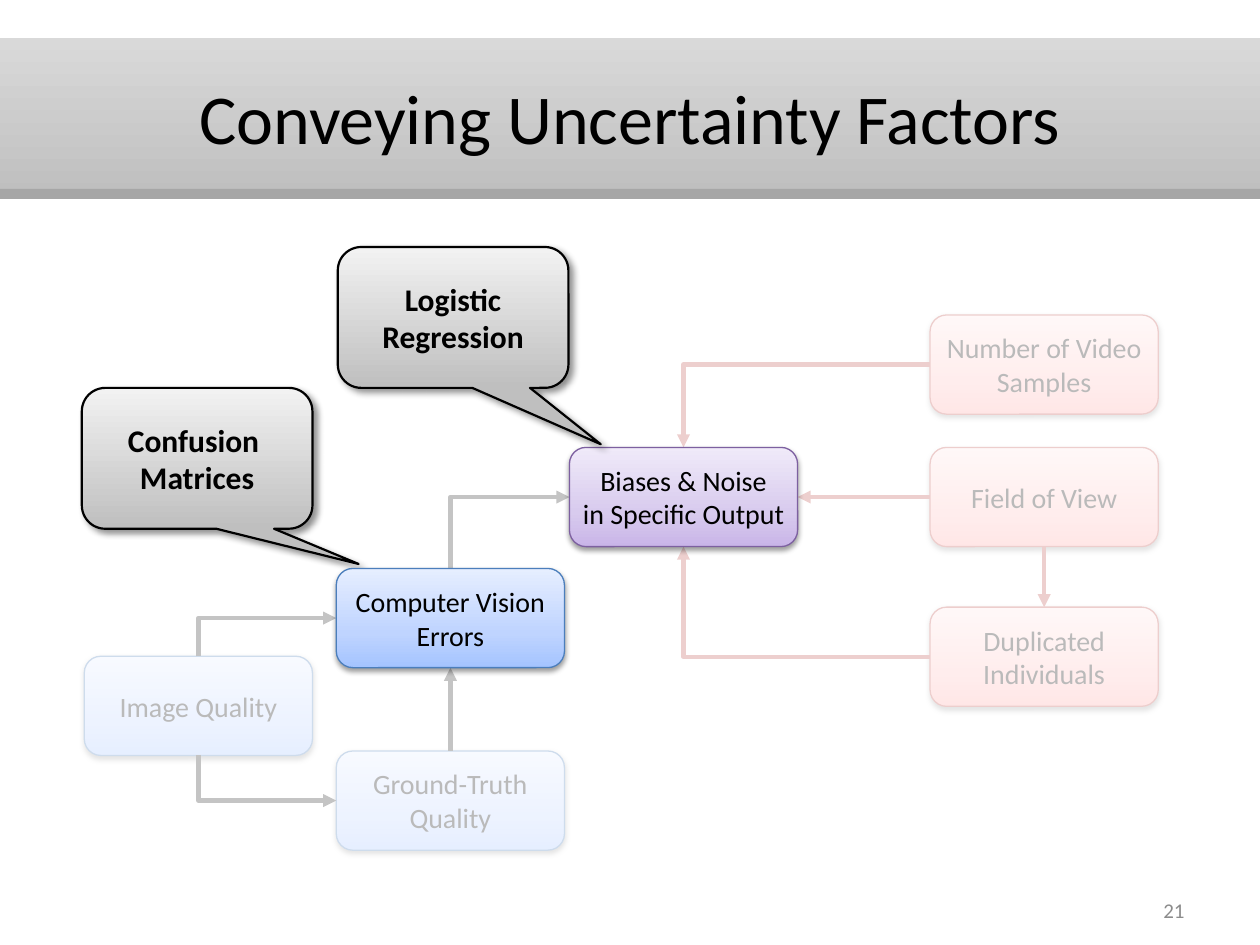
"""Build a slide on conveying uncertainty factors as a flow of linked boxes."""
from lxml import etree
from pptx import Presentation
from pptx.dml.color import RGBColor
from pptx.enum.shapes import MSO_CONNECTOR, MSO_SHAPE
from pptx.enum.text import MSO_ANCHOR, PP_ALIGN
from pptx.oxml.ns import qn
from pptx.util import Cm, Pt

RECT, ROUNDED = MSO_SHAPE.RECTANGLE, MSO_SHAPE.ROUNDED_RECTANGLE
CALLOUT = MSO_SHAPE.ROUNDED_RECTANGULAR_CALLOUT
STRAIGHT, ELBOW = MSO_CONNECTOR.STRAIGHT, MSO_CONNECTOR.ELBOW
MIDDLE = MSO_ANCHOR.MIDDLE
CENTER, RIGHT = PP_ALIGN.CENTER, PP_ALIGN.RIGHT

BLACK = RGBColor(0x00, 0x00, 0x00)
WHITE = RGBColor(0xFF, 0xFF, 0xFF)
NUMBER_GRAY = RGBColor(0x8C, 0x8C, 0x8C)
RULE_GRAY = RGBColor(0xA6, 0xA6, 0xA6)
SILVER = RGBColor(0xBF, 0xBF, 0xBF)
LIGHT_GRAY = RGBColor(0xD9, 0xD9, 0xD9)
PALE_GRAY = RGBColor(0xF2, 0xF2, 0xF2)
DARK_LINK = RGBColor(0x26, 0x26, 0x26)
RED_LINK = RGBColor(0xC0, 0x50, 0x4D)
RED_EDGE = RGBColor(0xBF, 0x4C, 0x48)
BLUE_EDGE = RGBColor(0x4B, 0x7E, 0xBC)
PURPLE_EDGE = RGBColor(0x7D, 0x60, 0xA0)
RED_STOPS = (RGBColor(0xFF, 0xA6, 0xA5), RGBColor(0xFF, 0xC0, 0xBF), RGBColor(0xFF, 0xE7, 0xE7))
BLUE_STOPS = (RGBColor(0xA4, 0xC4, 0xFF), RGBColor(0xBF, 0xD4, 0xFF), RGBColor(0xE6, 0xEE, 0xFF))
PURPLE_STOPS = (RGBColor(0xC9, 0xB5, 0xE8), RGBColor(0xD8, 0xCB, 0xEE), RGBColor(0xF0, 0xEA, 0xF9))
RED, BLUE, PURPLE = (RED_STOPS, RED_EDGE), (BLUE_STOPS, BLUE_EDGE), (PURPLE_STOPS, PURPLE_EDGE)

SLIDE_W, SLIDE_H = 25.4, 19.05
NODE_W, NODE_H = 4.6, 2.0
CALLOUT_W, CALLOUT_H = 4.65, 2.84
TOP, BOTTOM, LEFT, RIGHT_SIDE = (0.5, 0), (0.5, 1), (0, 0.5), (1, 0.5)


def port(place, side):
    return place[0] + side[0] * NODE_W, place[1] + side[1] * NODE_H


def add_color(parent, color, alpha=None):
    element = etree.SubElement(parent, qn("a:srgbClr"), val=str(color))
    if alpha is not None:
        etree.SubElement(element, qn("a:alpha"), val=str(alpha * 1000))


class FactorSlide:
    """Holds the style and the current slide."""

    def __init__(self, slide, font="Calibri"):
        self.shapes = slide.shapes
        self.font = font

    def shape(self, kind, x, y, w, h, edge=None, width=0.75):
        shape = self.shapes.add_shape(kind, Cm(x), Cm(y), Cm(w), Cm(h))
        shape.shadow.inherit = False
        if edge is None:
            shape.line.fill.background()
        else:
            shape.line.color.rgb = edge
            shape.line.width = Pt(width)
        return shape

    def bar(self, x, y, w, h, color, alpha=None):
        bar = self.shape(RECT, x, y, w, h)
        bar.fill.solid()
        bar.fill.fore_color.rgb = color
        if alpha is not None:
            fill = bar._element.spPr.find(qn("a:solidFill"))
            fill.clear()
            add_color(fill, color, alpha)

    def shade(self, shape, stops):
        shape.fill.gradient()
        shape.fill.gradient_angle = 90
        stop_list = shape._element.spPr.find(qn("a:gradFill")).find(qn("a:gsLst"))
        stop_list.clear()
        positions = (0, 35, 100) if len(stops) == 3 else (0, 100)
        for position, color in zip(positions, stops):
            add_color(etree.SubElement(stop_list, qn("a:gs"), pos=str(position * 1000)), color)

    def cast_shadow(self, shape, alpha, blur, distance, angle):
        effects = shape._element.spPr.find(qn("a:effectLst"))
        shadow = etree.SubElement(
            effects, qn("a:outerShdw"), blurRad=str(Pt(blur)), dist=str(Pt(distance)),
            dir=str(angle * 60000), rotWithShape="0")
        add_color(shadow, BLACK, alpha)

    def set_text(self, shape, text, size, color=BLACK, align=CENTER, bold=False, wrap=True, hanging=0):
        frame = shape.text_frame
        frame.text = text
        frame.word_wrap = wrap
        frame.vertical_anchor = MIDDLE
        for paragraph in frame.paragraphs:
            paragraph.alignment = align
            if hanging:
                properties = paragraph._p.get_or_add_pPr()
                properties.set("marL", str(Cm(hanging)))
                properties.set("indent", str(-Cm(hanging)))
            paragraph.font.name = self.font
            paragraph.font.size = Pt(size)
            paragraph.font.bold = bold
            paragraph.font.color.rgb = color

    def label(self, x, y, w, h, text, size, color, align):
        box = self.shapes.add_textbox(Cm(x), Cm(y), Cm(w), Cm(h))
        self.set_text(box, text, size, color, align)

    def header(self, title):
        band = self.shape(RECT, 0, 0.76, SLIDE_W, 3.18)
        self.shade(band, (SILVER, LIGHT_GRAY))
        self.bar(0, 3.81, SLIDE_W, 0.2, RULE_GRAY)
        self.label(0, 0.76, SLIDE_W, 3.18, title, 40, BLACK, CENTER)

    def node(self, place, text, palette):
        stops, edge = palette
        node = self.shape(ROUNDED, *place, NODE_W, NODE_H, edge)
        self.shade(node, stops)
        self.cast_shadow(node, 38, 3.1, 1.6, 90)
        frame = node.text_frame
        frame.margin_left = frame.margin_top = frame.margin_right = frame.margin_bottom = 0
        self.set_text(node, text, 16)

    def callout(self, x, y, text, tip):
        callout = self.shape(CALLOUT, x, y, CALLOUT_W, CALLOUT_H, BLACK, 1.25)
        callout.adjustments[0], callout.adjustments[1] = tip
        self.shade(callout, (SILVER, PALE_GRAY))
        self.cast_shadow(callout, 43, 4, 3, 45)
        self.set_text(callout, text, 18, bold=True, wrap=False, hanging=0.97)

    def link(self, start, end, color, kind=STRAIGHT):
        link = self.shapes.add_connector(kind, *(Cm(value) for value in (*start, *end)))
        link.line.color.rgb = color
        link.line.width = Pt(2.5)
        properties = link._element.spPr
        etree.SubElement(properties.find(qn("a:ln")), qn("a:tailEnd"), type="triangle")
        etree.SubElement(properties, qn("a:effectLst"))
        return link

    def corner(self, start, end, color, vertical_first=False):
        (x1, y1), (x2, y2) = start, end
        if vertical_first:
            mid_x, mid_y = (x1 + x2) / 2, (y1 + y2) / 2
            half_run, half_drop = (y1 - y2) / 2, (x2 - x1) / 2
            start = mid_x - half_run, mid_y - half_drop
            end = mid_x + half_run, mid_y + half_drop
        link = self.link(start, end, color, ELBOW)
        properties = link._element.spPr
        properties.find(qn("a:prstGeom")).set("prst", "bentConnector2")
        if vertical_first:
            properties.find(qn("a:xfrm")).set("rot", str(270 * 60000))


def main():
    presentation = Presentation()
    presentation.slide_width, presentation.slide_height = Cm(SLIDE_W), Cm(SLIDE_H)
    page = FactorSlide(presentation.slides.add_slide(presentation.slide_layouts[6]))
    page.header("Conveying Uncertainty Factors")

    samples, view, duplicates = ((18.75, y) for y in (6.35, 9.02, 12.24))
    vision, truth = ((6.78, y) for y in (11.46, 15.14))
    image, biases = (1.7, 13.23), (11.48, 9.02)

    for place, text, palette in (
        (samples, "Number of Video Samples", RED),
        (duplicates, "Duplicated Individuals", RED),
        (view, "Field of View", RED),
        (truth, "Ground-Truth Quality", BLUE),
        (image, "Image Quality", BLUE),
    ):
        page.node(place, text, palette)

    page.link(port(view, BOTTOM), port(duplicates, TOP), RED_LINK)
    page.link(port(view, LEFT), port(biases, RIGHT_SIDE), RED_LINK)
    page.link(port(truth, TOP), port(vision, BOTTOM), DARK_LINK)
    page.corner(port(duplicates, LEFT), port(biases, BOTTOM), RED_LINK)
    page.corner(port(samples, LEFT), port(biases, TOP), RED_LINK)
    page.corner(port(image, BOTTOM), port(truth, LEFT), DARK_LINK, vertical_first=True)
    page.corner(port(image, TOP), port(vision, LEFT), DARK_LINK, vertical_first=True)
    page.corner(port(vision, TOP), port(biases, LEFT), DARK_LINK, vertical_first=True)

    page.label(18.21, 17.83, 5.92, 1.02, "21", 12, NUMBER_GRAY, RIGHT)
    page.bar(1.07, 5.51, 23.06, 12.32, WHITE, alpha=73)
    page.callout(1.65, 7.82, "Confusion \nMatrices", (0.7, 0.75))
    page.node(vision, "Computer Vision Errors", BLUE)
    page.node(biases, "Biases & Noise\nin Specific Output", PURPLE)
    page.callout(6.81, 4.98, "Logistic\nRegression", (0.64, 0.9))
    presentation.save("out.pptx")


if __name__ == "__main__":
    main()
